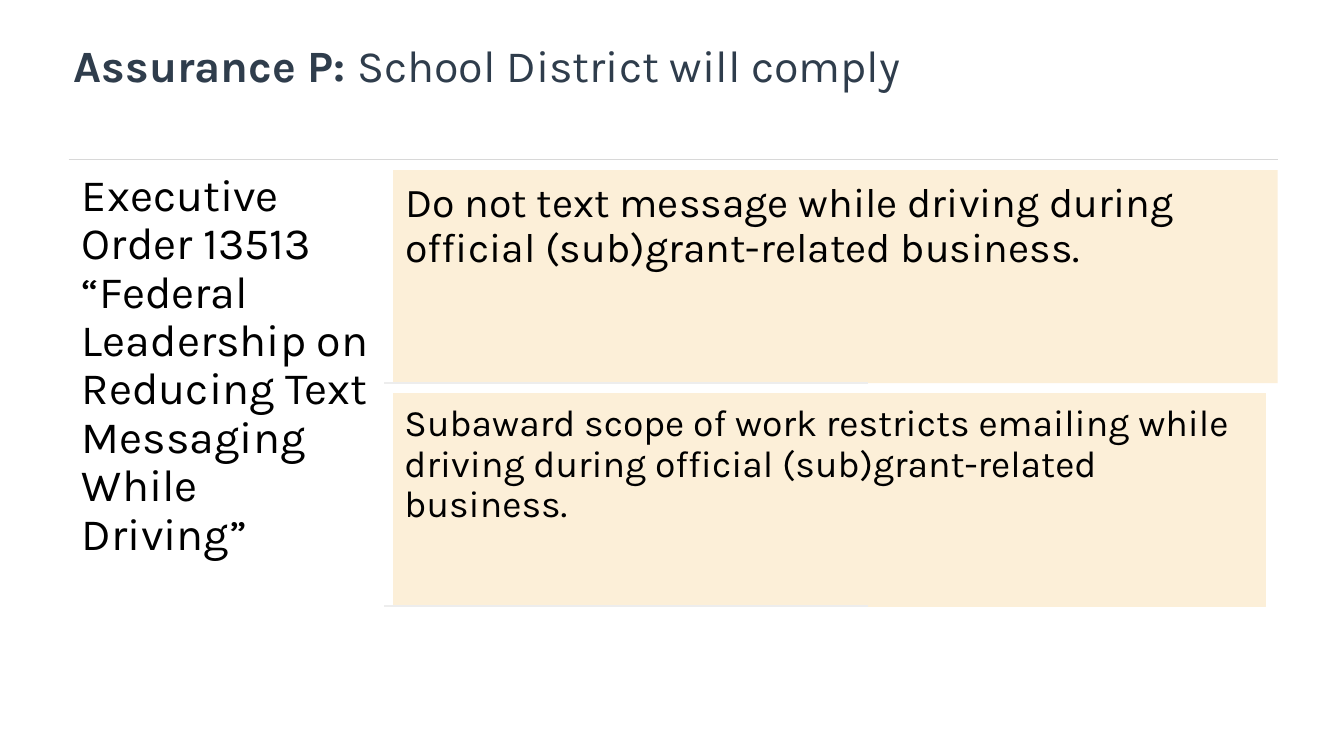
import pptx
import pptx.util
import pptx.dml.color
import pptx.enum.shapes
import pptx.enum.text
import pptx.oxml.ns
import lxml.etree

Cm = pptx.util.Cm
Pt = pptx.util.Pt
RGBColor = pptx.dml.color.RGBColor

NAVY = RGBColor(0x2F, 0x3D, 0x4C)
BLACK = RGBColor(0x00, 0x00, 0x00)
CREAM = RGBColor(0xFC, 0xEF, 0xD8)
GREY = RGBColor(0xD8, 0xD8, 0xD8)
PALE_GREY = RGBColor(0xED, 0xED, 0xED)
FONT = "Karla"

LEFT, RIGHT = 2.59, 48.29
RULE_TOP = 6.02
CARD_LEFT, CARD_TOP, CARD_HEIGHT, CARD_PITCH = 14.86, 6.43, 8.05, 8.43
CARD_RULE_LEFT, CARD_RULE_RIGHT = 14.53, 32.79

# Width, inset, text size, outlined, wording
CARDS = [
    (33.43, 0.46, 44, False,
     "Do not text message while driving during official "
     "(sub)grant-related business."),
    (32.97, 0.43, 40, True,
     "Subaward scope of work restricts emailing while driving during "
     "official (sub)grant-related business."),
]


def set_attributes(obj, values):
    for name, value in values.items():
        setattr(obj, name, value)


def write_text(sp, runs, size, color, inset=None):
    """Fill a shape with one left-aligned paragraph of (text, bold) runs."""
    tf = sp.text_frame
    set_attributes(tf, {
        "word_wrap": True,
        "auto_size": pptx.enum.text.MSO_AUTO_SIZE.NONE,
        "vertical_anchor": pptx.enum.text.MSO_ANCHOR.TOP,
    })
    if inset is not None:
        for side in ("left", "top", "right", "bottom"):
            setattr(tf, f"margin_{side}", Cm(inset))
    p = tf.paragraphs[0]
    set_attributes(p, {"alignment": pptx.enum.text.PP_ALIGN.LEFT,
                       "line_spacing": 0.9})
    for text, bold in runs:
        r = p.add_run()
        r.text = text
        set_attributes(r.font, {"name": FONT, "size": Pt(size), "bold": bold})
        r.font.color.rgb = color


def add_title(s, runs):
    sp = s.shapes.title
    set_attributes(sp, {"left": Cm(2.54), "top": Cm(1.52),
                        "width": Cm(45.69), "height": Cm(3.05)})
    write_text(sp, runs, 48, NAVY)


def add_rule(s, left, right, top, color, width):
    line = s.shapes.add_connector(pptx.enum.shapes.MSO_CONNECTOR.STRAIGHT,
                                  Cm(left), Cm(top), Cm(right), Cm(top))
    line.line.color.rgb = color
    line.line.width = Pt(width)
    lxml.etree.SubElement(line._element.spPr,
                          pptx.oxml.ns.qn("a:effectLst"))


def add_label(s, text):
    sp = s.shapes.add_textbox(Cm(LEFT), Cm(RULE_TOP), Cm(11.91), Cm(17.32))
    write_text(sp, [(text, False)], 48, BLACK, 0.51)


def add_card(s, top, width, inset, size, outlined, text):
    sp = s.shapes.add_shape(pptx.enum.shapes.MSO_SHAPE.RECTANGLE,
                            Cm(CARD_LEFT), Cm(top), Cm(width), Cm(CARD_HEIGHT))
    sp.shadow.inherit = False
    sp.fill.solid()
    sp.fill.fore_color.rgb = CREAM
    if outlined:
        sp.line.color.rgb = CREAM
        sp.line.width = Pt(0.75)
    else:
        sp.line.fill.background()
    write_text(sp, [(text, False)], size, BLACK, inset)
    add_rule(s, CARD_RULE_LEFT, CARD_RULE_RIGHT, top + CARD_HEIGHT,
             PALE_GREY, 1.5)


def main():
    prs = pptx.Presentation()
    set_attributes(prs, {"slide_width": Cm(50.8), "slide_height": Cm(28.575)})
    s = prs.slides.add_slide(prs.slide_layouts.get_by_name("Title Only"))

    # Heading
    add_title(s, [("Assurance P: ", True),
                  ("School District will comply", False)])
    add_rule(s, LEFT, RIGHT, RULE_TOP, GREY, 1)

    # Executive order and its requirements
    add_label(s, "Executive Order 13513 “Federal Leadership on Reducing "
                 "Text Messaging While Driving”")
    for i, card in enumerate(CARDS):
        add_card(s, CARD_TOP + i * CARD_PITCH, *card)

    prs.save("out.pptx")


if __name__ == "__main__":
    main()
